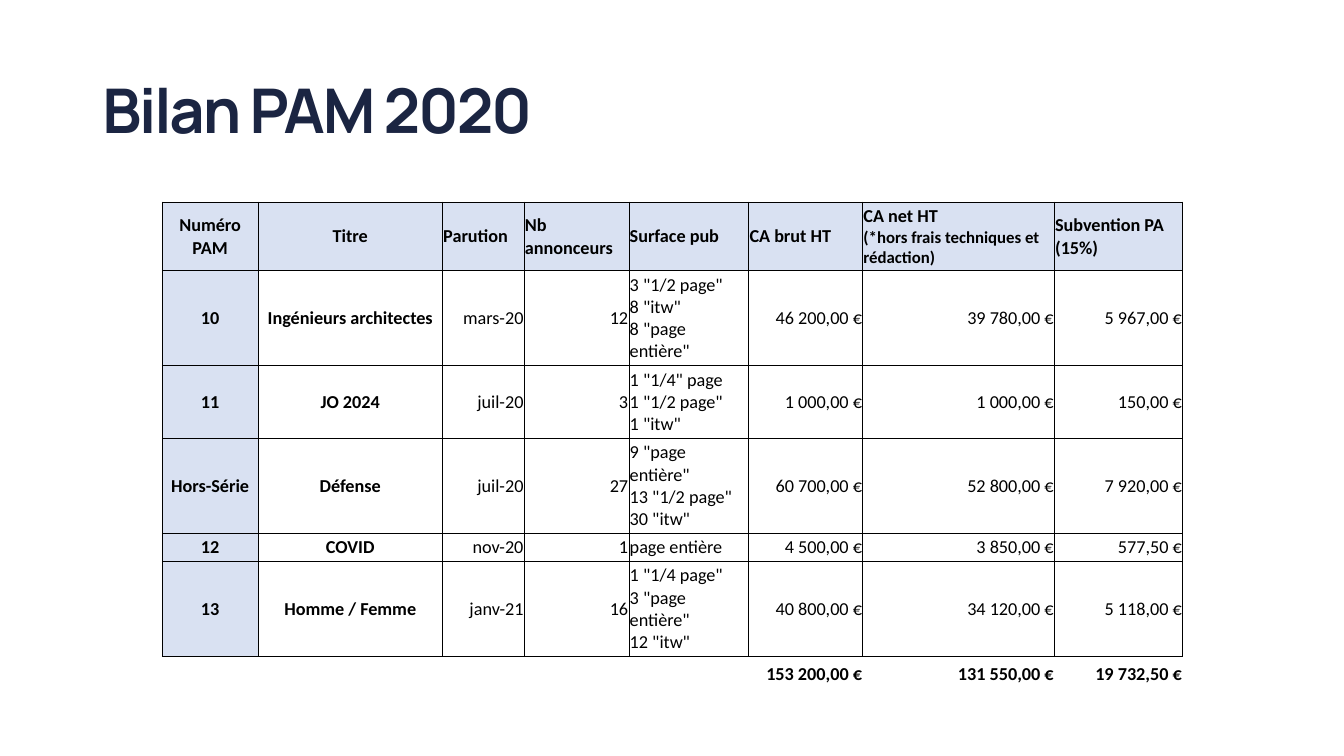
from dataclasses import dataclass

from lxml import etree
from pptx import Presentation
from pptx import util as u
from pptx.dml.color import RGBColor
from pptx.enum import text
from pptx.oxml import ns


@dataclass(frozen=True)
class Theme:
    navy: str = "1B2542"
    black: str = "000000"
    shade: str = "D9E1F2"
    title_font: str = "Manrope"
    table_font: str = "Calibri"
    title_size: float = 44
    table_size: float = 13
    note_size: float = 12
    rule_width: float = 0.5


THEME = Theme()
LEFT, CENTER, RIGHT = text.PP_ALIGN.LEFT, text.PP_ALIGN.CENTER, text.PP_ALIGN.RIGHT

HEADINGS = ["Numéro PAM", "Titre", "Parution", "Nb annonceurs", "Surface pub", "CA brut HT",
            "CA net HT\n(*hors frais techniques et rédaction)", "Subvention PA (15%)"]
ISSUES = [
    ["10", "Ingénieurs architectes", "mars-20", "12", '3 "1/2 page"\n8 "itw"\n8 "page entière"',
     "46 200,00 €", "39 780,00 €", "5 967,00 €"],
    ["11", "JO 2024", "juil-20", "3", '1 "1/4" page\n1 "1/2 page"\n1 "itw"',
     "1 000,00 €", "1 000,00 €", "150,00 €"],
    ["Hors-Série", "Défense", "juil-20", "27", '9 "page entière"\n13 "1/2 page"\n30 "itw"',
     "60 700,00 €", "52 800,00 €", "7 920,00 €"],
    ["12", "COVID", "nov-20", "1", "page entière",
     "4 500,00 €", "3 850,00 €", "577,50 €"],
    ["13", "Homme / Femme", "janv-21", "16", '1 "1/4 page"\n3 "page entière"\n12 "itw"',
     "40 800,00 €", "34 120,00 €", "5 118,00 €"],
]
TOTALS = [""] * 5 + ["153 200,00 €", "131 550,00 €", "19 732,50 €"]

COLUMN_WIDTHS = [2.41, 4.65, 2.06, 2.64, 3.02, 2.87, 4.83, 3.23]
ROW_HEIGHTS = [1.73, 2.39, 1.83, 2.39, 0.71, 2.39, 0.91]
HEADING_ALIGNS = [CENTER] * 2 + [LEFT] * 6
BODY_ALIGNS = [CENTER, CENTER, RIGHT, RIGHT, LEFT, RIGHT, RIGHT, RIGHT]


def write(frame, words, size, font, color, bold=False, align=LEFT,
          note_size=None, line_spacing=None, tracking=None):
    """Fill a frame with one paragraph; lines after the first may use note_size."""
    frame.word_wrap = True
    para = frame.paragraphs[0]
    para.alignment = align
    if line_spacing:
        para.line_spacing = line_spacing
    for index, line in enumerate(words.split("\n")):
        if index:
            para.add_line_break()
            line_break = para._p.findall(ns.qn("a:br"))[-1]
            etree.SubElement(line_break, ns.qn("a:rPr"), sz=str(int(size * 100)))
        span = para.add_run()
        span.text = line
        span.font.size = u.Pt(note_size if index and note_size else size)
        span.font.name = font
        span.font.bold = bold
        span.font.color.rgb = RGBColor.from_string(color)
        if tracking:
            span.font._element.set("spc", str(int(tracking * 100)))


def set_borders(cell, visible):
    """Draw the named sides of a cell and clear the others."""
    properties = cell._tc.get_or_add_tcPr()
    for index, side in enumerate("LRTB"):
        rule = etree.Element(ns.qn(f"a:ln{side}"), w=str(u.Pt(THEME.rule_width)))
        if side in visible:
            fill = etree.SubElement(rule, ns.qn("a:solidFill"))
            etree.SubElement(fill, ns.qn("a:srgbClr"), val=THEME.black)
        else:
            etree.SubElement(rule, ns.qn("a:noFill"))
        properties.insert(index, rule)


def add_title(page, left, top, width, height):
    box = page.shapes.add_textbox(u.Cm(left), u.Cm(top), u.Cm(width), u.Cm(height))
    box.text_frame.vertical_anchor = text.MSO_ANCHOR.MIDDLE
    write(box.text_frame, "Bilan PAM 2020", THEME.title_size, THEME.title_font, THEME.navy,
          bold=True, line_spacing=0.9, tracking=-1.5)


def add_results(page, left, top):
    rows = [HEADINGS, *ISSUES, TOTALS]
    table = page.shapes.add_table(
        len(rows), len(HEADINGS), u.Cm(left), u.Cm(top),
        u.Cm(sum(COLUMN_WIDTHS)), u.Cm(sum(ROW_HEIGHTS))).table
    table.first_row = table.horz_banding = False
    for column, width in zip(table.columns, COLUMN_WIDTHS):
        column.width = u.Cm(width)

    for r, values in enumerate(rows):
        table.rows[r].height = u.Cm(ROW_HEIGHTS[r])
        heading, total = r == 0, r == len(rows) - 1
        aligns = HEADING_ALIGNS if heading else BODY_ALIGNS
        for c, value in enumerate(values):
            cell = table.cell(r, c)
            cell.vertical_anchor = text.MSO_ANCHOR.MIDDLE
            cell.margin_left = cell.margin_right = cell.margin_top = u.Cm(0.02)
            cell.margin_bottom = 0
            # Headings and issue numbers are shaded
            if heading or (c == 0 and not total):
                cell.fill.solid()
                cell.fill.fore_color.rgb = RGBColor.from_string(THEME.shade)
            else:
                cell.fill.background()
            set_borders(cell, "T" if total else "LRTB")
            if value:
                write(cell.text_frame, value, THEME.table_size, THEME.table_font, THEME.black,
                      bold=heading or total or c < 2, align=aligns[c],
                      note_size=THEME.note_size if heading else None)


def main():
    deck = Presentation()
    deck.slide_width, deck.slide_height = u.Cm(33.87), u.Cm(19.05)
    page = deck.slides.add_slide(deck.slide_layouts[6])
    # Title above, results table below
    add_title(page, 2.33, 1.01, 29.21, 3.68)
    add_results(page, 4.09, 5.09)
    deck.save("out.pptx")


if __name__ == "__main__":
    main()
